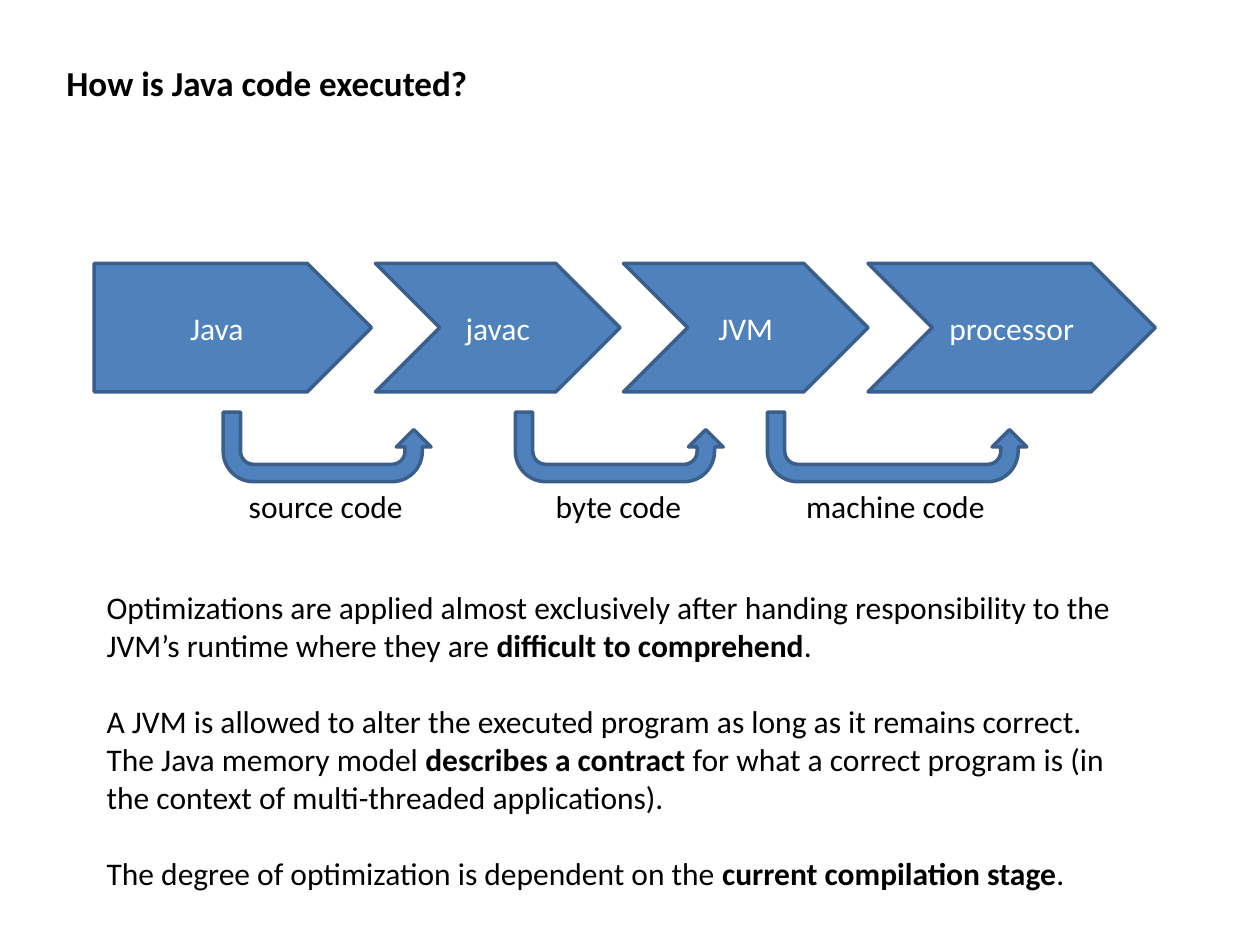
"""Build the slide that shows how Java code is executed."""
from typing import NamedTuple

from pptx import Presentation
from pptx.dml.color import RGBColor
from pptx.enum.shapes import MSO_SHAPE
from pptx.enum.text import MSO_ANCHOR, MSO_AUTO_SIZE, PP_ALIGN
from pptx.oxml.ns import qn
from pptx.util import Cm, Pt

PENTAGON, CHEVRON, U_TURN = MSO_SHAPE.PENTAGON, MSO_SHAPE.CHEVRON, MSO_SHAPE.U_TURN_ARROW
MIDDLE, CENTER, LEFT = MSO_ANCHOR.MIDDLE, PP_ALIGN.CENTER, PP_ALIGN.LEFT
FIT = MSO_AUTO_SIZE.SHAPE_TO_FIT_TEXT

BLUE, EDGE, WHITE, BLACK = "4F81BD", "3A5F8C", "FFFFFF", "000000"
STAGE_TOP, STAGE_HEIGHT = 5.31, 2.59
ARROW_TOP, ARROW_HEIGHT = 8.31, 1.4
LABEL_TOP, LABEL_HEIGHT = 9.69, 1.02
PARAGRAPH_GAP = 22


class Stage(NamedTuple):
    text: str
    kind: MSO_SHAPE
    left: float
    width: float


class Handover(NamedTuple):
    text: str
    left: float
    width: float
    label_width: float


class Run(NamedTuple):
    text: str
    bold: bool = False


class Line(NamedTuple):
    runs: list[Run]
    gap: float = 0


STAGES = [
    Stage("Java", PENTAGON, 1.9, 5.59),
    Stage("javac", CHEVRON, 7.57, 4.93),
    Stage("JVM", CHEVRON, 12.57, 4.93),
    Stage("processor", CHEVRON, 17.5, 5.79),
]
HANDOVERS = [
    Handover("source code", 4.5, 4.19, 3.66),
    Handover("byte code", 10.39, 4.19, 3.07),
    Handover("machine code", 15.47, 5.23, 4.17),
]
TITLE = [Line([Run("How is Java code executed?", True)])]
BODY = [
    Line([Run("Optimizations are applied almost exclusively after handing responsibility to the")]),
    Line([Run("JVM’s runtime where they are "), Run("difficult to comprehend", True), Run(".")]),
    Line([Run("A JVM is allowed to alter the executed program as long as it remains correct.")],
         PARAGRAPH_GAP),
    Line([Run("The Java memory model "), Run("describes a contract", True),
          Run(" for what a correct program is (in")]),
    Line([Run("the context of multi-threaded applications).")]),
    Line([Run("The degree of optimization is dependent on the "),
          Run("current compilation stage", True), Run(".")], PARAGRAPH_GAP),
]


def color(value: str) -> RGBColor:
    """Turn a hex string into a colour."""
    return RGBColor.from_string(value)


def write(tf, lines: list[Line], hex_color: str, size: float = 18, align=LEFT) -> None:
    """Fill a text frame with formatted lines."""
    for i, line in enumerate(lines):
        p = tf.add_paragraph() if i else tf.paragraphs[0]
        p.alignment = align
        p.space_before = Pt(line.gap)
        for run in line.runs:
            r = p.add_run()
            r.text = run.text
            r.font.color.rgb = color(hex_color)
            font = {"name": "Calibri", "size": Pt(size), "bold": run.bold}
            for name, value in font.items():
                setattr(r.font, name, value)


def add_text(slide, box: tuple, lines: list[Line], size: float = 18) -> None:
    """Add an unwrapped text box in black."""
    tf = slide.shapes.add_textbox(*map(Cm, box)).text_frame
    for name, value in {"word_wrap": False, "auto_size": FIT}.items():
        setattr(tf, name, value)
    write(tf, lines, BLACK, size)


def add_block(slide, kind: MSO_SHAPE, box: tuple):
    """Add a blue preset shape with a darker edge."""
    s = slide.shapes.add_shape(kind, *map(Cm, box))
    s.shadow.inherit = False
    s.fill.solid()
    s.fill.fore_color.rgb = color(BLUE)
    s.line.color.rgb = color(EDGE)
    s.line.width = Pt(2)
    return s


def add_stage(slide, stage: Stage) -> None:
    """Add one stage of the execution chain."""
    s = add_block(slide, stage.kind, (stage.left, STAGE_TOP, stage.width, STAGE_HEIGHT))
    s.text_frame.vertical_anchor = MIDDLE
    write(s.text_frame, [Line([Run(stage.text)])], WHITE, align=CENTER)


def add_handover(slide, item: Handover) -> None:
    """Add an upward U-turn arrow with its label centred below."""
    s = add_block(slide, U_TURN, (item.left, ARROW_TOP, item.width, ARROW_HEIGHT))
    s.rotation = 180
    s.element.spPr.find(qn("a:xfrm")).set("flipH", "1")
    left = item.left + (item.width - item.label_width) / 2
    add_text(slide, (left, LABEL_TOP, item.label_width, LABEL_HEIGHT), [Line([Run(item.text)])])


def main() -> None:
    """Build and save the presentation."""
    prs = Presentation()
    prs.slide_width, prs.slide_height = Cm(25.4), Cm(19.05)
    slide = prs.slides.add_slide(prs.slide_layouts[6])
    add_text(slide, (1.09, 1.12, 8.66, 1.12), TITLE, 20)
    for stage in STAGES:
        add_stage(slide, stage)
    for item in HANDOVERS:
        add_handover(slide, item)
    add_text(slide, (1.9, 11.73, 21.16, 6.4), BODY)
    prs.save("out.pptx")


if __name__ == "__main__":
    main()
